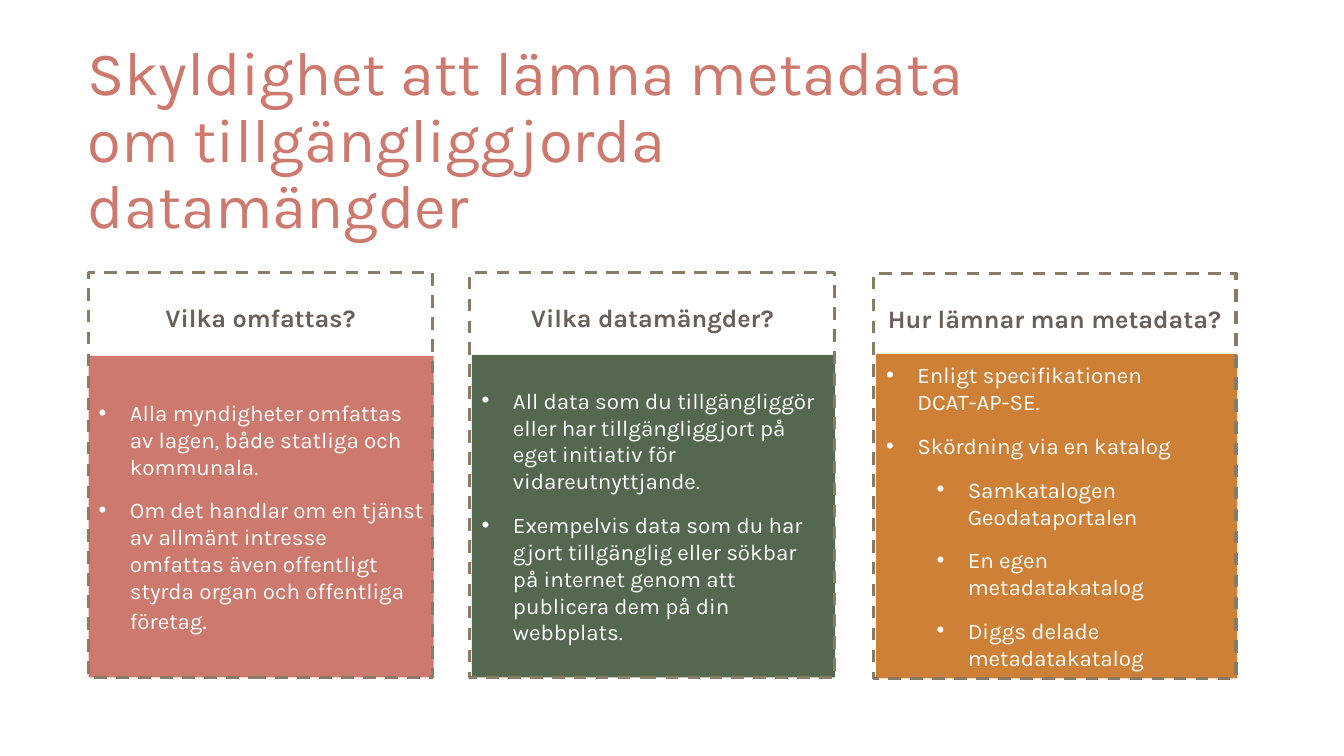
"""Build a slide with three framed columns about the duty to supply metadata."""
from lxml import etree
from pptx import Presentation
from pptx import util as u
from pptx.dml.color import RGBColor
from pptx.enum import dml, shapes, text
from pptx.oxml.ns import qn

FONT = "Karla"
WHITE, ROSE, GREEN, OCHRE = "FFFFFF", "CD796E", "546850", "CE8036"
FRAME_LINE, HEADING_COLOR = "897B65", "696059"
TITLE = "Skyldighet att lämna metadata om tillgängliggjorda datamängder"
TITLE_BOX = (0.77, 1.05, 9.57, 1.4)
FRAME_HEIGHT = 4.02
BODY_SIZE = 16

COLUMNS = [
    {"heading": "Vilka omfattas?", "color": ROSE,
     "frame": (0.88, 2.7, 3.41), "panel": (0.88, 3.53, 3.42),
     "bullets": [
         (0, [("Alla myndigheter omfattas av lagen, både statliga och kommunala.", BODY_SIZE)]),
         (0, [("Om det handlar om en tjänst av allmänt intresse omfattas även "
               "offentligt styrda organ och offentliga företag", BODY_SIZE), (".", 18)])]},
    {"heading": "Vilka datamängder?", "color": GREEN,
     "frame": (4.66, 2.7, 3.62), "panel": (4.68, 3.52, 3.6),
     "bullets": [
         (0, [("All data som du tillgängliggör eller har tillgängliggjort på eget "
               "initiativ för vidareutnyttjande.", BODY_SIZE)]),
         (0, [("Exempelvis data som du har gjort tillgänglig eller sökbar på internet "
               "genom att publicera dem på din webbplats.", BODY_SIZE)])]},
    {"heading": "Hur lämnar man metadata?", "color": OCHRE,
     "frame": (8.66, 2.71, 3.6), "panel": (8.69, 3.51, 3.58),
     "bullets": [
         (0, [("Enligt specifikationen\nDCAT-AP-SE.", BODY_SIZE)]),
         (0, [("Skördning via en katalog", BODY_SIZE)]),
         (1, [("Samkatalogen Geodataportalen", BODY_SIZE)]),
         (1, [("En egen metadatakatalog", BODY_SIZE)]),
         (1, [("Diggs delade metadatakatalog", BODY_SIZE)])]},
]


def rgb(value):
    """Turn a hex string into a colour."""
    return RGBColor.from_string(value)


def add_run(paragraph, words, size, color, bold=False):
    """Add formatted words, breaking the line at each newline."""
    for number, line in enumerate(words.split("\n")):
        if number:
            paragraph.add_line_break()
        run = paragraph.add_run()
        run.text = line
        run.font.name = FONT
        run.font.size = u.Pt(size)
        run.font.bold = bold
        run.font.color.rgb = rgb(color)


def add_rectangle(slide, left, top, width, height, anchor):
    """Add a plain rectangle with wrapped text."""
    shape = slide.shapes.add_shape(
        shapes.MSO_SHAPE.RECTANGLE, *map(u.Inches, (left, top, width, height)))
    shape.shadow.inherit = False
    shape.text_frame.word_wrap = True
    shape.text_frame.vertical_anchor = anchor
    return shape


def add_bullet(paragraph, level):
    """Give a paragraph a hanging bullet."""
    properties = paragraph._p.get_or_add_pPr()
    properties.set("marL", str(u.Inches(0.31 + 0.5 * level)))
    properties.set("indent", str(-u.Inches(0.31)))
    etree.SubElement(properties, qn("a:buFont")).set("typeface", "Arial")
    etree.SubElement(properties, qn("a:buChar")).set("char", "•")
    paragraph.level = level
    paragraph.alignment = text.PP_ALIGN.LEFT
    paragraph.space_after = u.Pt(12)


def add_panel(slide, column):
    """Add the coloured panel with its bullet list."""
    left, top, width = column["panel"]
    bottom = column["frame"][1] + FRAME_HEIGHT
    panel = add_rectangle(slide, left, top, width, bottom - top, text.MSO_ANCHOR.MIDDLE)
    panel.fill.solid()
    panel.fill.fore_color.rgb = rgb(column["color"])
    panel.line.fill.background()
    frame = panel.text_frame
    for number, (level, runs) in enumerate(column["bullets"]):
        paragraph = frame.add_paragraph() if number else frame.paragraphs[0]
        add_bullet(paragraph, level)
        for words, size in runs:
            add_run(paragraph, words, size, WHITE)


def add_frame(slide, column):
    """Add the dashed frame with the column heading."""
    frame = add_rectangle(slide, *column["frame"], FRAME_HEIGHT, text.MSO_ANCHOR.TOP)
    frame.fill.background()
    frame.line.color.rgb = rgb(FRAME_LINE)
    frame.line.width = u.Pt(2.25)
    frame.line.dash_style = dml.MSO_LINE.DASH
    frame.text_frame.margin_top = u.Inches(0.3)
    paragraph = frame.text_frame.paragraphs[0]
    paragraph.alignment = text.PP_ALIGN.CENTER
    add_run(paragraph, column["heading"], 18, HEADING_COLOR, True)


def add_title(slide):
    """Fill and place the title placeholder."""
    title = slide.shapes.title
    title.left, title.top, title.width, title.height = map(u.Inches, TITLE_BOX)
    frame = title.text_frame
    frame.auto_size = text.MSO_AUTO_SIZE.NONE
    frame.word_wrap = True
    frame.vertical_anchor = text.MSO_ANCHOR.BOTTOM
    paragraph = frame.paragraphs[0]
    paragraph.alignment = text.PP_ALIGN.LEFT
    paragraph.line_spacing = 0.9
    add_run(paragraph, TITLE, 44, ROSE)


def main():
    """Build and save the presentation."""
    presentation = Presentation()
    presentation.slide_width = u.Inches(13.33)
    presentation.slide_height = u.Inches(7.5)
    slide = presentation.slides.add_slide(presentation.slide_layouts[5])
    add_title(slide)
    for column in COLUMNS:
        add_panel(slide, column)
        add_frame(slide, column)
    presentation.save("out.pptx")


if __name__ == "__main__":
    main()
